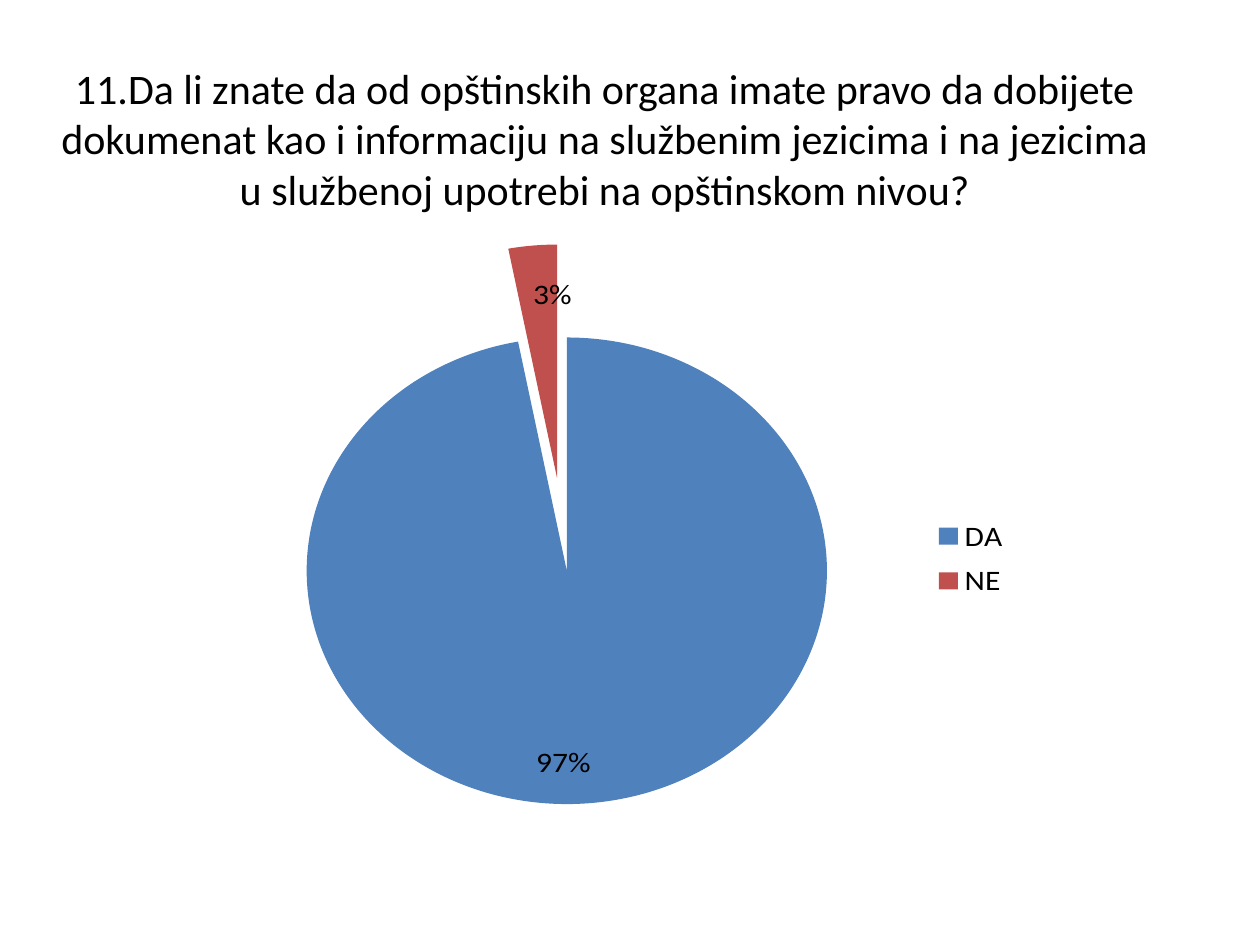
from lxml.etree import SubElement
from pptx import Presentation
from pptx.chart.data import CategoryChartData
from pptx.dml.color import RGBColor
from pptx.enum.chart import XL_CHART_TYPE as ChartType
from pptx.enum.chart import XL_LABEL_POSITION as LabelPosition
from pptx.enum.chart import XL_LEGEND_POSITION as LegendPosition
from pptx.enum.text import MSO_ANCHOR as Anchor
from pptx.enum.text import PP_ALIGN as Align
from pptx.oxml.ns import qn
from pptx.util import Cm, Pt

FONT = "Calibri"
COLORS = {"text": "000000", "DA": "4F81BD", "NE": "C0504D"}
ANSWERS = {"DA": 97, "NE": 3}
EXPLOSIONS = {"DA": 15, "NE": 25}
QUESTION = (
    "11.Da li znate da od opštinskih organa imate pravo da dobijete "
    "dokumenat kao i informaciju na službenim jezicima i na jezicima "
    "u službenoj upotrebi na opštinskom nivou?"
)


def style_font(font, size):
    font.name = FONT
    font.size = Pt(size)
    font.color.rgb = RGBColor.from_string(COLORS["text"])


def add_question(page):
    title = page.shapes.title
    title.left, title.top = Cm(0.89), Cm(1.12)
    title.width, title.height = Cm(22.6), Cm(3.33)
    frame = title.text_frame
    frame.text = QUESTION
    frame.word_wrap = True
    frame.vertical_anchor = Anchor.MIDDLE
    para = frame.paragraphs[0]
    para.alignment = Align.CENTER
    style_font(para.runs[0].font, 24)


def set_layout(element, x, y, width, height, inner=False):
    layout = element.find(qn("c:layout"))
    if layout is None:
        layout = SubElement(element, qn("c:layout"))
        previous = element.find(qn("c:legendPos"))
        if previous is None:
            element.insert(0, layout)
        else:
            previous.addnext(layout)
    manual = SubElement(layout, qn("c:manualLayout"))
    settings = [("layoutTarget", "inner")] if inner else []
    settings += [("xMode", "edge"), ("yMode", "edge")]
    settings += [("x", x), ("y", y), ("w", width), ("h", height)]
    for name, value in settings:
        SubElement(manual, qn(f"c:{name}")).set("val", str(value))


def style_slice(series, index, answer):
    point = series.points[index]
    fill = point.format.fill
    fill.solid()
    fill.fore_color.rgb = RGBColor.from_string(COLORS[answer])
    shape_format = series._element.findall(qn("c:dPt"))[index].find(qn("c:spPr"))
    explosion = SubElement(shape_format.getparent(), qn("c:explosion"))
    explosion.set("val", str(EXPLOSIONS[answer]))
    shape_format.addprevious(explosion)


def add_pie(page):
    data = CategoryChartData()
    data.categories = list(ANSWERS)
    data.add_series("Series 1", list(ANSWERS.values()))
    chart = page.shapes.add_chart(
        ChartType.PIE, Cm(3.73), Cm(4.93), Cm(16.94), Cm(11.28), data
    ).chart
    style_font(chart.font, 18)
    chart.has_title = False
    chart.has_legend = True
    chart.legend.position = LegendPosition.RIGHT
    chart.legend.include_in_layout = False
    set_layout(chart.legend._element, 0.88, 0.46, 0.11, 0.2)
    plot = chart.plots[0]
    plot.vary_by_categories = True
    set_layout(plot._element.getparent(), 0.03, 0.05, 0.84, 0.93, inner=True)
    for index, answer in enumerate(ANSWERS):
        style_slice(plot.series[0], index, answer)
    plot.has_data_labels = True
    labels = plot.data_labels
    labels.show_percentage = True
    labels.show_value = False
    labels.number_format = "0%"
    labels.number_format_is_linked = False
    labels.position = LabelPosition.INSIDE_END
    style_font(labels.font, 18)


def main():
    deck = Presentation()
    deck.slide_width, deck.slide_height = Cm(25.4), Cm(19.05)
    page = deck.slides.add_slide(deck.slide_layouts[5])
    add_question(page)
    add_pie(page)
    deck.save("out.pptx")


if __name__ == "__main__":
    main()
